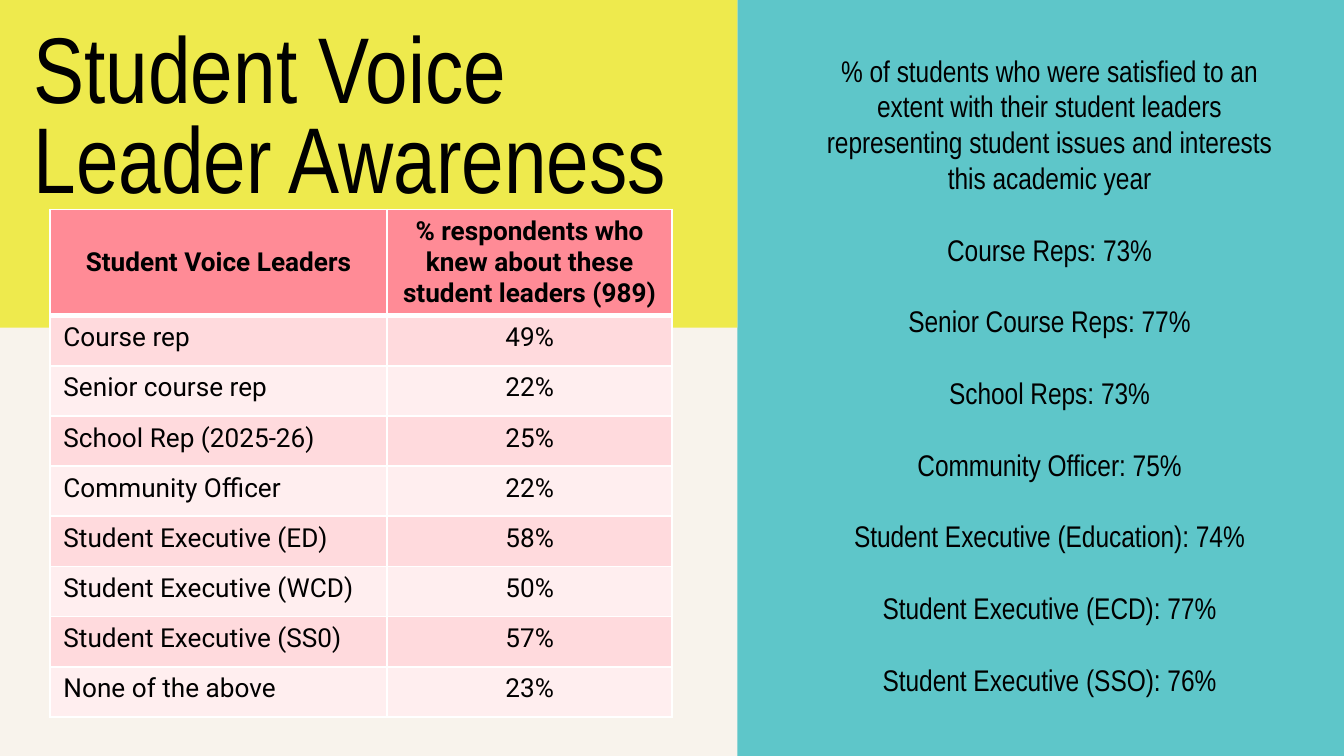
import dataclasses

import pptx
import pptx.dml.color
import pptx.enum.shapes
import pptx.enum.text
import pptx.oxml
import pptx.oxml.ns
import pptx.util

Pt = pptx.util.Pt
ALIGN = pptx.enum.text.PP_ALIGN
ANCHOR = pptx.enum.text.MSO_ANCHOR


@dataclasses.dataclass(frozen=True)
class Theme:
    paper: str = "F8F3EC"
    teal: str = "5EC6C9"
    yellow: str = "EEEA4D"
    ink: str = "000000"
    header: str = "FF8B96"
    stripes: tuple = ("FFDADD", "FFEEEF")
    border: str = "FFFFFF"
    display_font: str = "Arial Narrow"
    table_font: str = "Roboto"
    title_size: int = 50
    side_size: int = 16
    table_size: int = 14


THEME = Theme()

AWARENESS = [
    ("Student Voice Leaders", "% respondents who knew about these student leaders (989)"),
    ("Course rep", "49%"),
    ("Senior course rep", "22%"),
    ("School Rep (2025-26)", "25%"),
    ("Community Officer", "22%"),
    ("Student Executive (ED)", "58%"),
    ("Student Executive (WCD)", "50%"),
    ("Student Executive (SS0)", "57%"),
    ("None of the above", "23%"),
]

SATISFACTION = [
    "% of students who were satisfied to an extent with their student leaders "
    "representing student issues and interests this academic year",
    "Course Reps: 73%",
    "Senior Course Reps: 77%",
    "School Reps: 73%",
    "Community Officer: 75%",
    "Student Executive (Education): 74%",
    "Student Executive (ECD): 77%",
    "Student Executive (SSO): 76%",
]


def paint(fill, colour):
    fill.solid()
    fill.fore_color.rgb = pptx.dml.color.RGBColor.from_string(colour)


def style_paragraph(para, font, size, align, bold=False):
    para.alignment = align
    para.font.name = font
    para.font.size = Pt(size)
    para.font.bold = bold
    para.font.color.rgb = pptx.dml.color.RGBColor.from_string(THEME.ink)


def add_band(page, left, top, width, height, colour):
    band = page.shapes.add_shape(
        pptx.enum.shapes.MSO_SHAPE.RECTANGLE, Pt(left), Pt(top), Pt(width), Pt(height))
    band.shadow.inherit = False
    paint(band.fill, colour)
    band.line.fill.background()


def place_title(page, text):
    title = page.shapes.title
    # Bring the title in front of the colour bands
    title.element.getparent().append(title.element)
    title.left, title.top, title.width, title.height = Pt(13), Pt(14.4), Pt(393), Pt(102)
    frame = title.text_frame
    frame.text = text
    frame.word_wrap = True
    frame.auto_size = pptx.enum.text.MSO_AUTO_SIZE.NONE
    frame.vertical_anchor = ANCHOR.TOP
    frame.margin_left = frame.margin_right = Pt(5)
    frame.margin_top = frame.margin_bottom = Pt(2.9)
    para = frame.paragraphs[0]
    style_paragraph(para, THEME.display_font, THEME.title_size, ALIGN.LEFT)
    para.line_spacing = 0.8
    para.space_before = Pt(0)


def set_borders(cell, top, bottom):
    properties = cell._tc.get_or_add_tcPr()
    for side, width in (("L", 1), ("R", 1), ("T", top), ("B", bottom)):
        properties.append(pptx.oxml.parse_xml(
            f'<a:ln{side} {pptx.oxml.ns.nsdecls("a")} w="{Pt(width)}">'
            f'<a:solidFill><a:srgbClr val="{THEME.border}"/></a:solidFill></a:ln{side}>'))


def fill_cell(cell, text, row, column):
    is_header = row == 0
    set_borders(cell, top=3 if row == 1 else 1, bottom=3 if is_header else 1)
    paint(cell.fill, THEME.header if is_header else THEME.stripes[(row - 1) % 2])
    cell.text = text
    cell.vertical_anchor = ANCHOR.MIDDLE if is_header else ANCHOR.TOP
    align = ALIGN.CENTER if is_header or column == 1 else ALIGN.LEFT
    style_paragraph(cell.text_frame.paragraphs[0], THEME.table_font,
                    THEME.table_size, align, bold=is_header)


def add_awareness_table(page):
    widths = (180.7, 152.6)
    header_height, row_height = 56.5, 26.9
    height = header_height + row_height * (len(AWARENESS) - 1)
    table = page.shapes.add_table(
        len(AWARENESS), len(widths), Pt(26.8), Pt(112.2), Pt(sum(widths)), Pt(height)).table
    for column, width in zip(table.columns, widths):
        column.width = Pt(width)
    for row, texts in enumerate(AWARENESS):
        table.rows[row].height = Pt(row_height if row else header_height)
        for column, text in enumerate(texts):
            fill_cell(table.cell(row, column), text, row, column)


def add_satisfaction_list(page):
    box = page.shapes.add_textbox(Pt(431.3), Pt(24.5), Pt(262), Pt(356.4))
    frame = box.text_frame
    frame.word_wrap = True
    for index, text in enumerate(SATISFACTION):
        para = frame.add_paragraph() if index else frame.paragraphs[0]
        para.text = text
        style_paragraph(para, THEME.display_font, THEME.side_size, ALIGN.CENTER)
        if index:
            para.space_before = Pt(19.2)


def main():
    deck = pptx.Presentation()
    deck.slide_width, deck.slide_height = Pt(720), Pt(405)
    page = deck.slides.add_slide(deck.slide_layouts.get_by_name("Title Only"))

    # Background and colour bands
    paint(page.background.fill, THEME.paper)
    add_band(page, 395, 0, 325, 405, THEME.teal)
    add_band(page, 0, 0, 395, 175.5, THEME.yellow)

    # Title and awareness table on the left
    place_title(page, "Student Voice Leader Awareness")
    add_awareness_table(page)

    # Satisfaction figures on the right
    add_satisfaction_list(page)

    deck.save("out.pptx")


if __name__ == "__main__":
    main()
